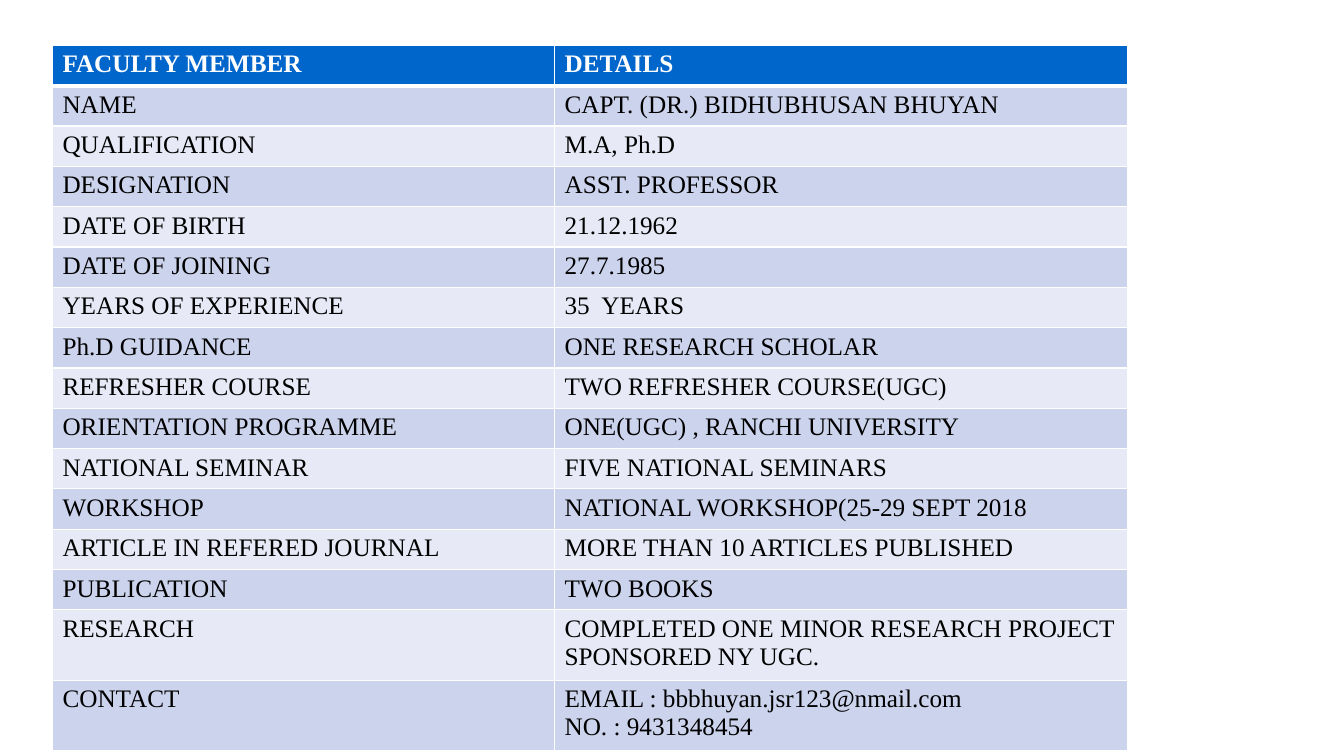
import pptx
import pptx.dml.color
import pptx.oxml
import pptx.oxml.ns
import pptx.util

RGBColor = pptx.dml.color.RGBColor
WHITE = RGBColor(0xFF, 0xFF, 0xFF)
BLACK = RGBColor(0x00, 0x00, 0x00)
HEADER_BLUE = RGBColor(0x00, 0x66, 0xCC)
DARK_BAND = RGBColor(0xCC, 0xD3, 0xEC)
LIGHT_BAND = RGBColor(0xE7, 0xEA, 0xF6)

FONT_NAME = "Times New Roman"
FONT_SIZE = 18
SLIDE_WIDTH, SLIDE_HEIGHT = 13.33, 7.5
TABLE_LEFT, TABLE_TOP = 0.52, 0.45
COLUMN_WIDTHS = (4.98, 5.68)
SINGLE_ROW, DOUBLE_ROW = 0.4, 0.7
DOUBLE_ROW_LABELS = ("RESEARCH", "CONTACT")
THIN_BORDER, HEADER_BORDER = 1, 3

FACULTY_ROWS = (
    ("FACULTY MEMBER", "DETAILS"),
    ("NAME", "CAPT. (DR.) BIDHUBHUSAN BHUYAN"),
    ("QUALIFICATION", "M.A, Ph.D"),
    ("DESIGNATION", "ASST. PROFESSOR"),
    ("DATE OF BIRTH", "21.12.1962"),
    ("DATE OF JOINING", "27.7.1985"),
    ("YEARS OF EXPERIENCE", "35  YEARS"),
    ("Ph.D GUIDANCE", "ONE RESEARCH SCHOLAR"),
    ("REFRESHER COURSE", "TWO REFRESHER COURSE(UGC)"),
    ("ORIENTATION PROGRAMME", "ONE(UGC) , RANCHI UNIVERSITY"),
    ("NATIONAL SEMINAR", "FIVE NATIONAL SEMINARS"),
    ("WORKSHOP", "NATIONAL WORKSHOP(25-29 SEPT 2018"),
    ("ARTICLE IN REFERED JOURNAL", "MORE THAN 10 ARTICLES PUBLISHED"),
    ("PUBLICATION", "TWO BOOKS"),
    ("RESEARCH", "COMPLETED ONE MINOR RESEARCH PROJECT SPONSORED NY UGC."),
    ("CONTACT", "EMAIL : bbbhuyan.jsr123@nmail.com\nNO. : 9431348454"),
)


def write_cell(cell, text, color, bold):
    for index, line in enumerate(text.split("\n")):
        text_frame = cell.text_frame
        paragraph = text_frame.add_paragraph() if index else text_frame.paragraphs[0]
        run = paragraph.add_run()
        run.text = line
        run.font.name = FONT_NAME
        run.font.size = pptx.util.Pt(FONT_SIZE)
        run.font.bold = bold
        run.font.color.rgb = color


def fill_cell(cell, color):
    cell.fill.solid()
    cell.fill.fore_color.rgb = color


def set_borders(cell, top, bottom):
    properties = cell._tc.get_or_add_tcPr()
    widths = {"lnL": THIN_BORDER, "lnR": THIN_BORDER, "lnT": top, "lnB": bottom}
    for position, (side, width) in enumerate(widths.items()):
        border = pptx.oxml.parse_xml(
            f'<a:{side} {pptx.oxml.ns.nsdecls("a")} w="{pptx.util.Pt(width)}">'
            f'<a:solidFill><a:srgbClr val="{WHITE}"/></a:solidFill></a:{side}>'
        )
        properties.insert(position, border)


def add_faculty_table(slide):
    heights = [
        DOUBLE_ROW if label in DOUBLE_ROW_LABELS else SINGLE_ROW
        for label, _ in FACULTY_ROWS
    ]
    frame = slide.shapes.add_table(
        len(FACULTY_ROWS),
        len(COLUMN_WIDTHS),
        pptx.util.Inches(TABLE_LEFT),
        pptx.util.Inches(TABLE_TOP),
        pptx.util.Inches(sum(COLUMN_WIDTHS)),
        pptx.util.Inches(sum(heights)),
    )
    table = frame.table
    for column, width in zip(table.columns, COLUMN_WIDTHS):
        column.width = pptx.util.Inches(width)
    for row_index, texts in enumerate(FACULTY_ROWS):
        table.rows[row_index].height = pptx.util.Inches(heights[row_index])
        is_header = row_index == 0
        band = DARK_BAND if row_index % 2 else LIGHT_BAND
        for column_index, text in enumerate(texts):
            cell = table.cell(row_index, column_index)
            write_cell(cell, text, WHITE if is_header else BLACK, is_header)
            fill_cell(cell, HEADER_BLUE if is_header else band)
            set_borders(
                cell,
                top=HEADER_BORDER if row_index == 1 else THIN_BORDER,
                bottom=HEADER_BORDER if is_header else THIN_BORDER,
            )


def main():
    presentation = pptx.Presentation()
    presentation.slide_width = pptx.util.Inches(SLIDE_WIDTH)
    presentation.slide_height = pptx.util.Inches(SLIDE_HEIGHT)
    slide = presentation.slides.add_slide(presentation.slide_layouts[6])
    add_faculty_table(slide)
    presentation.save("out.pptx")


if __name__ == "__main__":
    main()
